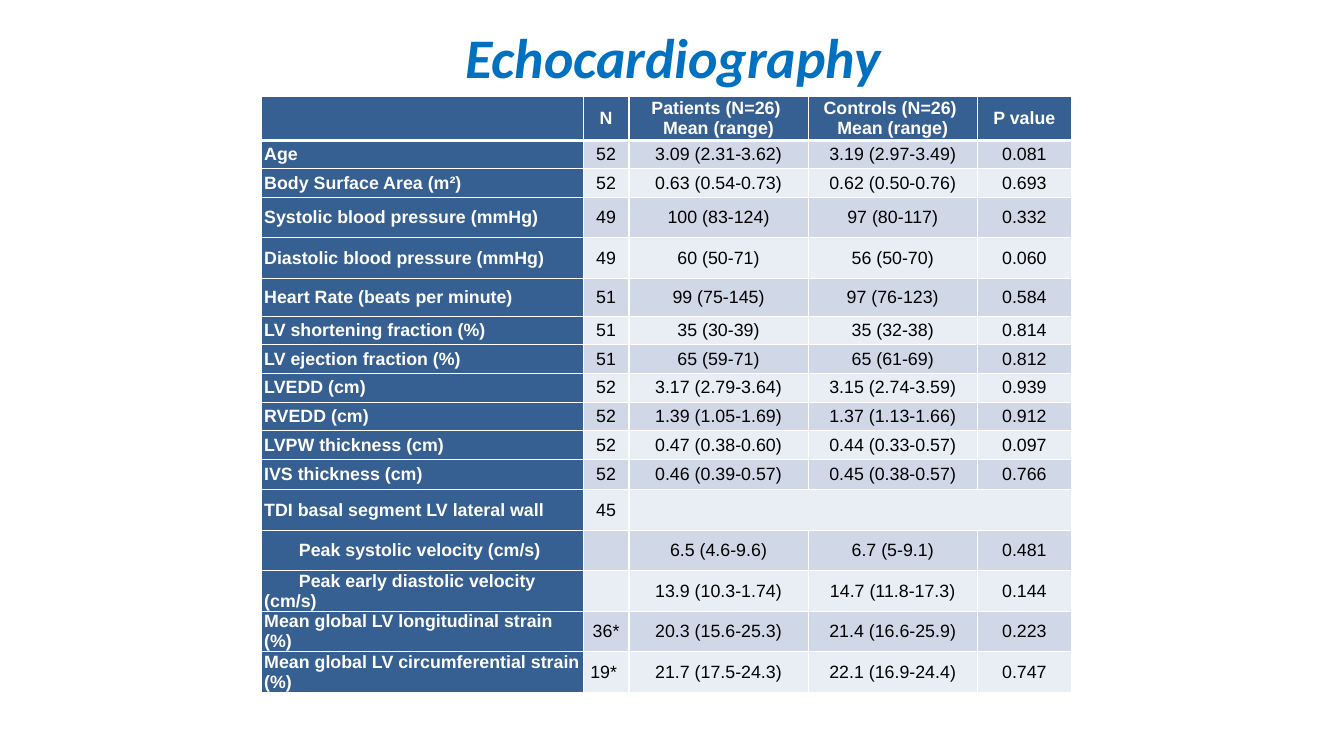
from dataclasses import dataclass

from pptx import Presentation
from pptx.dml.color import RGBColor
from pptx.enum.text import MSO_ANCHOR, MSO_AUTO_SIZE, PP_ALIGN
from pptx.oxml import parse_xml
from pptx.oxml.ns import nsdecls
from pptx.slide import Slide
from pptx.table import Table, _Cell
from pptx.util import Inches, Pt


@dataclass(frozen=True)
class Theme:
    title_color: str = "0070C0"
    heading_fill: str = "376092"
    heading_text: str = "FFFFFF"
    body_text: str = "000000"
    bands: tuple[str, str] = ("D0D8E8", "E9EDF4")
    border: str = "FFFFFF"
    thin_border: float = 1
    thick_border: float = 3
    title_font: str = "Calibri"
    table_font: str = "Arial"
    title_size: int = 44
    table_size: int = 14


@dataclass(frozen=True)
class Measure:
    label: str
    count: str = ""
    patients: str = ""
    controls: str = ""
    p_value: str = ""
    height: float = 0.31
    indent: float = 0

    def texts(self) -> tuple[str, ...]:
        return self.label, self.count, self.patients, self.controls, self.p_value


THEME = Theme()
TALL = 0.44
SUB_INDENT = 0.38
TABLE_HEIGHT = 6.52
COLUMN_WIDTHS = (3.52, 0.5, 1.96, 1.85, 1.03)
MEASURES = (
    Measure("", "N", "Patients (N=26) \nMean (range)", "Controls (N=26) \nMean (range)",
            "P value", 0.47),
    Measure("Age", "52", "3.09 (2.31-3.62)", "3.19 (2.97-3.49)", "0.081"),
    Measure("Body Surface Area (m²)", "52", "0.63 (0.54-0.73)", "0.62 (0.50-0.76)", "0.693"),
    Measure("Systolic blood pressure (mmHg)", "49", "100 (83-124)", "97 (80-117)", "0.332", TALL),
    Measure("Diastolic blood pressure (mmHg)", "49", "60 (50-71)", "56 (50-70)", "0.060", TALL),
    Measure("Heart Rate (beats per minute)", "51", "99 (75-145)", "97 (76-123)", "0.584", 0.41),
    Measure("LV shortening fraction (%)", "51", "35 (30-39)", "35 (32-38)", "0.814"),
    Measure("LV ejection fraction (%)", "51", "65 (59-71)", "65 (61-69)", "0.812"),
    Measure("LVEDD (cm)", "52", "3.17 (2.79-3.64)", "3.15 (2.74-3.59)", "0.939"),
    Measure("RVEDD (cm)", "52", "1.39 (1.05-1.69)", "1.37 (1.13-1.66)", "0.912"),
    Measure("LVPW thickness (cm)", "52", "0.47 (0.38-0.60)", "0.44 (0.33-0.57)", "0.097"),
    Measure("IVS thickness (cm)", "52", "0.46 (0.39-0.57)", "0.45 (0.38-0.57)", "0.766",
            0.33),
    Measure("TDI basal segment LV lateral wall", "45", height=TALL),
    Measure("Peak systolic velocity (cm/s)", "", "6.5 (4.6-9.6)", "6.7 (5-9.1)", "0.481",
            TALL, SUB_INDENT),
    Measure("Peak early diastolic velocity (cm/s)", "", "13.9 (10.3-1.74)",
            "14.7 (11.8-17.3)", "0.144", TALL, SUB_INDENT),
    Measure("Mean global LV longitudinal strain (%)", "36*", "20.3 (15.6-25.3)",
            "21.4 (16.6-25.9)", "0.223", TALL),
    Measure("Mean global LV circumferential strain (%)", "19* ", "21.7 (17.5-24.3)",
            "22.1 (16.9-24.4)", "0.747", TALL),
)


def apply_format(target: object, values: dict[str, object]) -> None:
    for name, value in values.items():
        setattr(target, name, value)


def add_title(page: Slide) -> None:
    box = page.shapes.add_textbox(Inches(4.99), Inches(0.2), Inches(4.8), Inches(0.84))
    apply_format(box.text_frame, {"word_wrap": False, "auto_size": MSO_AUTO_SIZE.SHAPE_TO_FIT_TEXT})
    span = box.text_frame.paragraphs[0].add_run()
    span.text = "Echocardiography"
    apply_format(span.font, {"name": THEME.title_font, "size": Pt(THEME.title_size),
                             "bold": True, "italic": True})
    span.font.color.rgb = RGBColor.from_string(THEME.title_color)


def add_borders(cell: _Cell, row: int) -> None:
    """Outline a cell, with the thick rule between heading row and body."""
    thick_side = {0: "B", 1: "T"}.get(row)
    for side in "LRTB":
        width = THEME.thick_border if side == thick_side else THEME.thin_border
        cell._tc.get_or_add_tcPr().append(parse_xml(
            f'<a:ln{side} {nsdecls("a")} w="{Pt(width)}"><a:solidFill>'
            f'<a:srgbClr val="{THEME.border}"/></a:solidFill></a:ln{side}>'))


def write_cell(cell: _Cell, text: str, is_heading: bool, is_label: bool, indent: float) -> None:
    apply_format(cell, {"margin_left": Inches(0.03), "margin_right": Inches(0.03),
                        "margin_top": 0, "margin_bottom": 0,
                        "vertical_anchor": MSO_ANCHOR.MIDDLE})
    if not text:
        return
    cell.text = text
    for para in cell.text_frame.paragraphs:
        para.alignment = PP_ALIGN.LEFT if is_label else PP_ALIGN.CENTER
        if is_label and indent:
            properties = para._p.get_or_add_pPr()
            properties.set("marL", "0")
            properties.set("indent", str(Inches(indent)))
        for span in para.runs:
            apply_format(span.font, {"name": THEME.table_font, "size": Pt(THEME.table_size),
                                     "bold": is_heading})
            color = THEME.heading_text if is_heading else THEME.body_text
            span.font.color.rgb = RGBColor.from_string(color)


def fill_row(table: Table, row: int, measure: Measure) -> None:
    for column, text in enumerate(measure.texts()):
        cell = table.cell(row, column)
        is_label = column == 0
        is_heading = is_label or row == 0
        write_cell(cell, text, is_heading, is_label, measure.indent)
        add_borders(cell, row)
        cell.fill.solid()
        fill = THEME.heading_fill if is_heading else THEME.bands[(row - 1) % 2]
        cell.fill.fore_color.rgb = RGBColor.from_string(fill)
    if not any(measure.texts()[2:]):
        table.cell(row, 2).merge(table.cell(row, 4))


def add_measures(page: Slide) -> None:
    table = page.shapes.add_table(len(MEASURES), len(COLUMN_WIDTHS), Inches(2.86), Inches(1.06),
                                  Inches(sum(COLUMN_WIDTHS)), Inches(TABLE_HEIGHT)).table
    for column, width in zip(table.columns, COLUMN_WIDTHS):
        column.width = Inches(width)
    scale = TABLE_HEIGHT / sum(measure.height for measure in MEASURES)
    for row, measure in enumerate(MEASURES):
        table.rows[row].height = Inches(measure.height * scale)
        fill_row(table, row, measure)


def main() -> None:
    deck = Presentation()
    apply_format(deck, {"slide_width": Inches(14.7), "slide_height": Inches(8.27)})
    page = deck.slides.add_slide(deck.slide_layouts[6])
    add_measures(page)
    add_title(page)
    deck.save("out.pptx")


if __name__ == "__main__":
    main()
